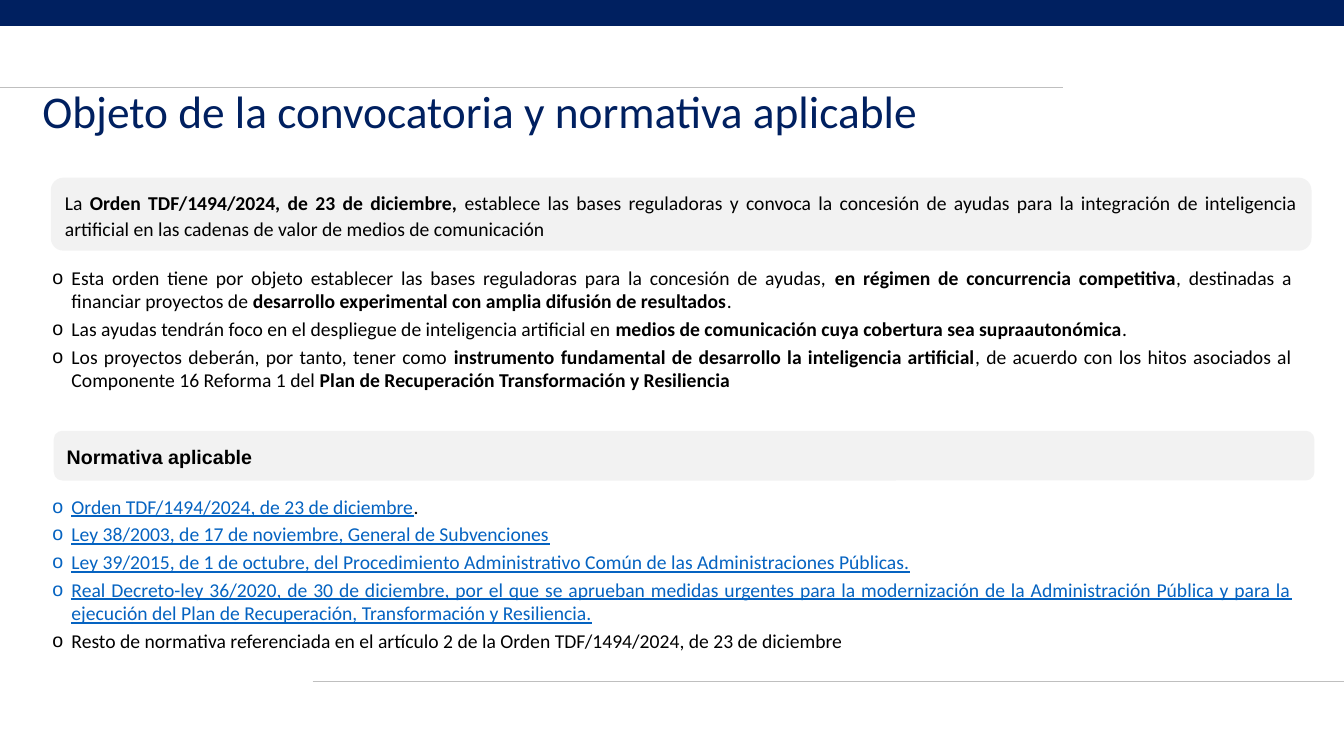
import dataclasses

import pptx
import pptx.dml.color
import pptx.enum.shapes
import pptx.enum.text
import pptx.oxml.ns
import pptx.util
from lxml import etree

ALIGN = pptx.enum.text.PP_ALIGN
SHAPE = pptx.enum.shapes.MSO_SHAPE
WIDTH, HEIGHT = pptx.util.Inches(13.33), pptx.util.Inches(7.5)


@dataclasses.dataclass(frozen=True)
class Theme:
    navy: str = "002060"
    panel: str = "F2F2F2"
    paper: str = "FFFFFF"
    rule: str = "BFBFBF"
    ink: str = "000000"
    link: str = "0563C1"
    font: str = "Calibri"
    heading_font: str = "Arial"
    title_size: float = 32.4
    body_size: float = 14


THEME = Theme()
BOLD = {"bold": True}
LINK = {"color": THEME.link, "underline": True}

# Asterisks enclose the emphasised parts of each text
ORDER = ("La *Orden TDF/1494/2024, de 23 de diciembre,* establece las bases reguladoras y "
         "convoca la concesión de ayudas para la integración de inteligencia artificial en "
         "las cadenas de valor de medios de comunicación")
AIMS = [
    "Esta orden tiene por objeto establecer las bases reguladoras para la concesión de ayudas, "
    "*en régimen de concurrencia competitiva*, destinadas a financiar proyectos de "
    "*desarrollo experimental con amplia difusión de resultados*.",
    "Las ayudas tendrán foco en el despliegue de inteligencia artificial en "
    "*medios de comunicación cuya cobertura sea supraautonómica*.",
    "Los proyectos deberán, por tanto, tener como "
    "*instrumento fundamental de desarrollo la inteligencia artificial*, de acuerdo con los "
    "hitos asociados al Componente 16 Reforma 1 del "
    "*Plan de Recuperación Transformación y Resiliencia*",
]
RULES = [
    "*Orden TDF/1494/2024, de 23 de diciembre*.",
    "*Ley 38/2003, de 17 de noviembre, General de Subvenciones*",
    "*Ley 39/2015, de 1 de octubre, del Procedimiento Administrativo Común de las "
    "Administraciones Públicas.*",
    "*Real Decreto-ley 36/2020, de 30 de diciembre, por el que se aprueban medidas urgentes "
    "para la modernización de la Administración Pública y para la ejecución del Plan de "
    "Recuperación, Transformación y Resiliencia.*",
    "Resto de normativa referenciada en el artículo 2 de la Orden TDF/1494/2024, "
    "de 23 de diciembre",
]


def area(left, top, width, height):
    """Turn percentages of the slide into lengths."""
    return [int(size * share / 100) for size, share in
            zip((WIDTH, HEIGHT, WIDTH, HEIGHT), (left, top, width, height))]


def rgb(code):
    return pptx.dml.color.RGBColor.from_string(code)


def write(paragraph, text, emphasis=BOLD, align=ALIGN.JUSTIFY, spacing=None,
          before=0, after=0, **base):
    """Fill a paragraph, formatting the parts between asterisks with emphasis."""
    paragraph.alignment = align
    paragraph.line_spacing = spacing
    paragraph.space_before = pptx.util.Pt(before)
    paragraph.space_after = pptx.util.Pt(after)
    for index, part in enumerate(text.split("*")):
        if not part:
            continue
        style = {"font": THEME.font, "size": THEME.body_size, "color": THEME.ink,
                 "bold": False, "underline": False, **base}
        if index % 2:
            style.update(emphasis)
        run = paragraph.add_run()
        run.text = part
        run.font.name = style["font"]
        run.font.size = pptx.util.Pt(style["size"])
        run.font.bold = style["bold"]
        run.font.underline = style["underline"]
        run.font.color.rgb = rgb(style["color"])


def add_bullet(paragraph):
    indent = pptx.util.Inches(0.19)
    props = paragraph._p.get_or_add_pPr()
    props.set("marL", str(indent))
    props.set("indent", str(-indent))
    qn = pptx.oxml.ns.qn
    etree.SubElement(props, qn("a:buFont"), typeface=THEME.heading_font)
    etree.SubElement(props, qn("a:buChar"), char="o")


def add_block(slide, place, fill, kind=SHAPE.RECTANGLE, outlined=True):
    block = slide.shapes.add_shape(kind, *area(*place))
    block.shadow.inherit = False
    block.fill.solid()
    block.fill.fore_color.rgb = rgb(fill)
    if outlined:
        block.line.color.rgb = rgb(fill)
        block.line.width = pptx.util.Pt(1)
    else:
        block.line.fill.background()
    block.text_frame.word_wrap = True
    block.text_frame.vertical_anchor = pptx.enum.text.MSO_ANCHOR.MIDDLE
    return block


def add_panel(slide, place, text, **style):
    panel = add_block(slide, place, THEME.panel, SHAPE.ROUNDED_RECTANGLE)
    write(panel.text_frame.paragraphs[0], text, spacing=1.1, after=6, **style)


def add_list(slide, place, items, emphasis):
    frame = add_block(slide, place, THEME.paper, outlined=False).text_frame
    for index, item in enumerate(items):
        paragraph = frame.add_paragraph() if index else frame.paragraphs[0]
        write(paragraph, item, emphasis, before=3)
        add_bullet(paragraph)


def add_rule(slide, left, top, width):
    x, y, length, _ = area(left, top, width, 0)
    rule = slide.shapes.add_connector(
        pptx.enum.shapes.MSO_CONNECTOR.STRAIGHT, x, y, x + length, y)
    rule.line.color.rgb = rgb(THEME.rule)
    rule.line.width = pptx.util.Pt(0.5)
    etree.SubElement(rule._element.spPr, pptx.oxml.ns.qn("a:effectLst"))


def set_title(slide, place, text):
    title = slide.shapes.title
    title.left, title.top, title.width, title.height = area(*place)
    frame = title.text_frame
    frame.word_wrap = True
    frame.auto_size = pptx.enum.text.MSO_AUTO_SIZE.NONE
    frame.vertical_anchor = pptx.enum.text.MSO_ANCHOR.MIDDLE
    write(frame.paragraphs[0], text, align=ALIGN.LEFT, spacing=0.9,
          size=THEME.title_size, color=THEME.navy)


def main():
    deck = pptx.Presentation()
    deck.slide_width, deck.slide_height = WIDTH, HEIGHT
    slide = deck.slides.add_slide(deck.slide_layouts[5])

    # Frame of the page
    add_block(slide, (0, 0, 100, 3.33), THEME.navy)
    add_rule(slide, 23.26, 90.13, 76.74)
    add_rule(slide, 0, 11.6, 79.07)
    set_title(slide, (2.4, 12, 77.57, 6), "Objeto de la convocatoria y normativa aplicable")

    # Purpose of the call
    add_list(slide, (3.15, 33.07, 93.7, 20.8), AIMS, BOLD)
    add_panel(slide, (3.83, 23.6, 93.7, 9.47), ORDER)

    # Applicable rules
    add_list(slide, (3.15, 64.93, 93.7, 21.87), RULES, LINK)
    add_panel(slide, (4.05, 57.07, 93.7, 6.4), "Normativa aplicable",
              font=THEME.heading_font, bold=True)

    deck.save("out.pptx")


if __name__ == "__main__":
    main()
